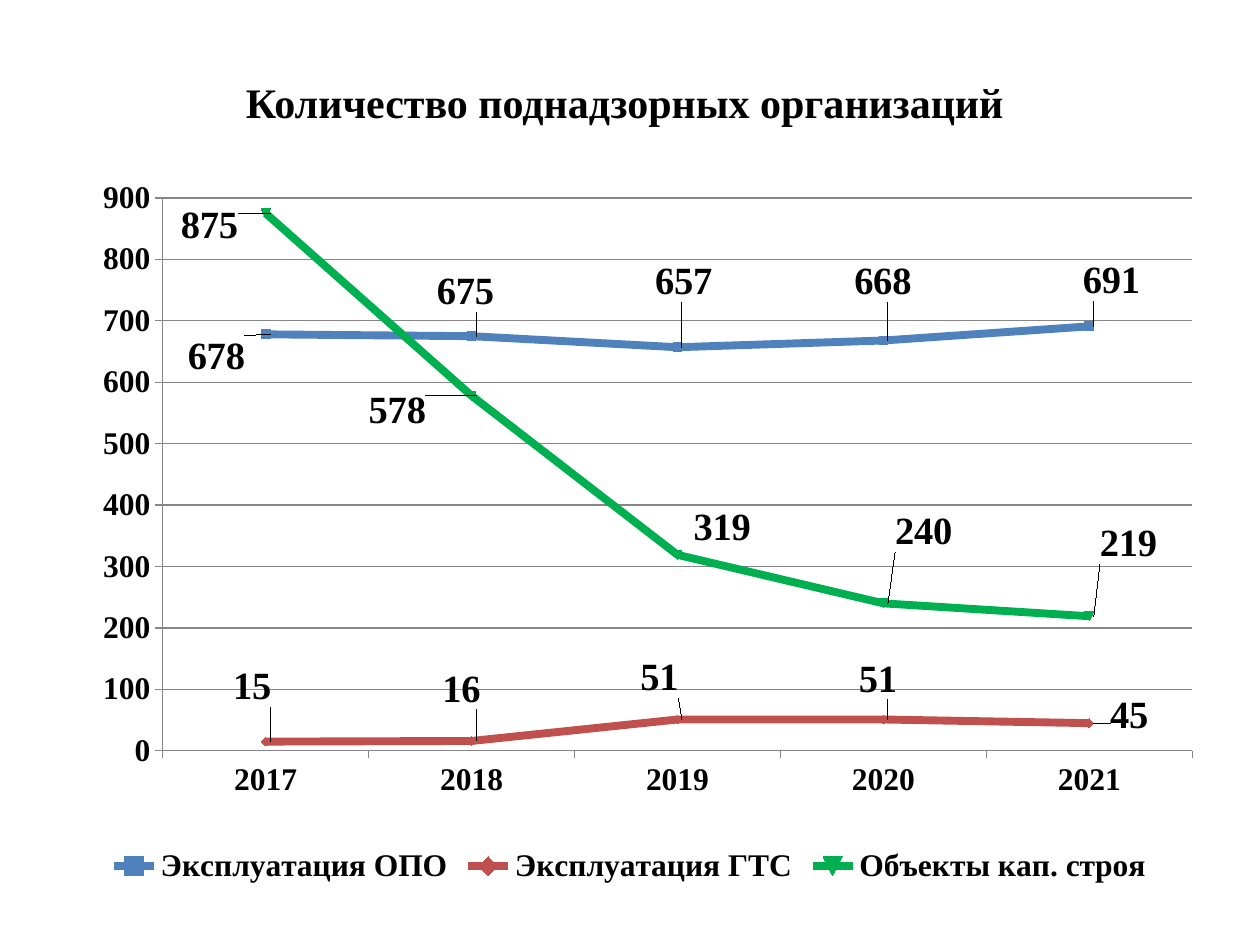
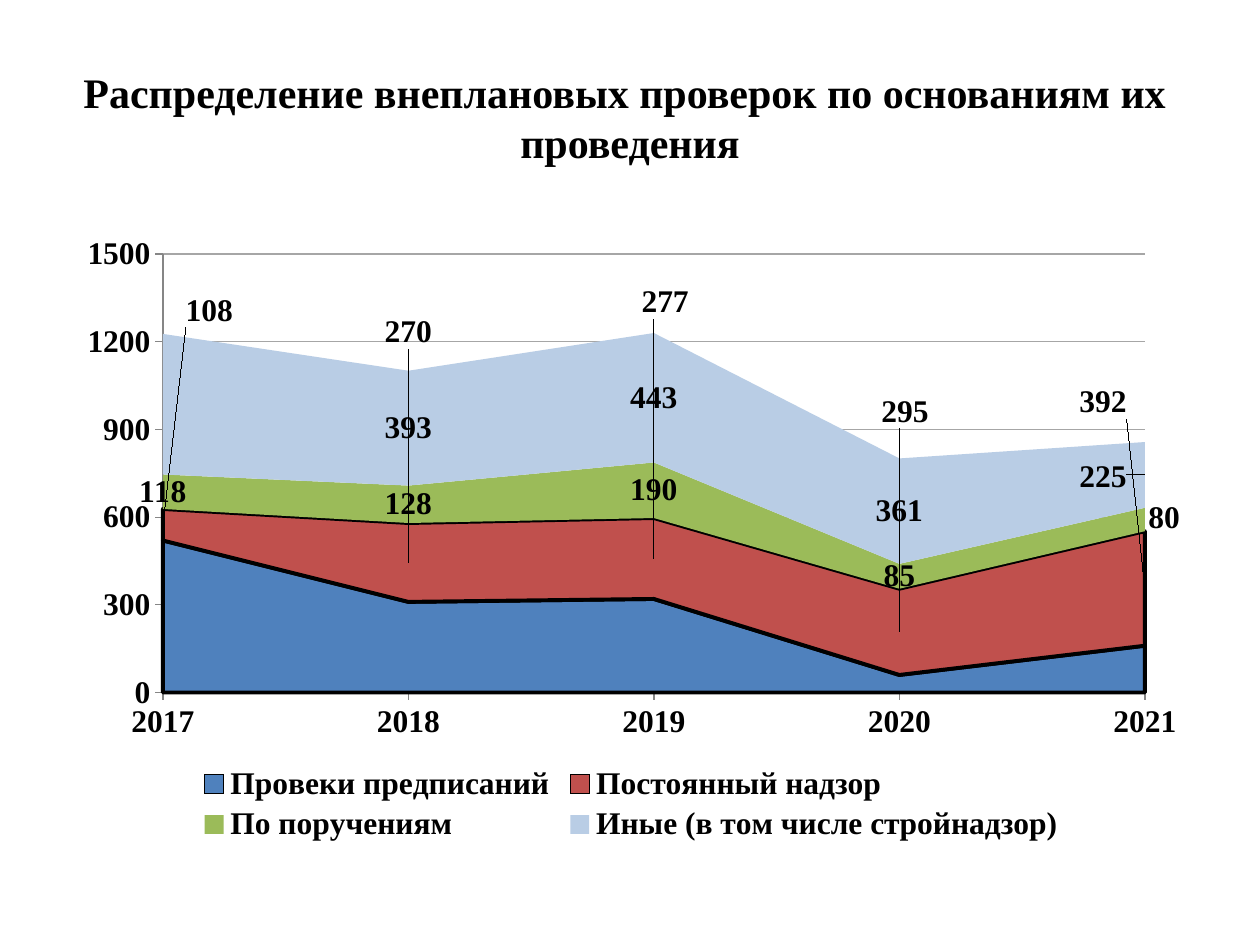
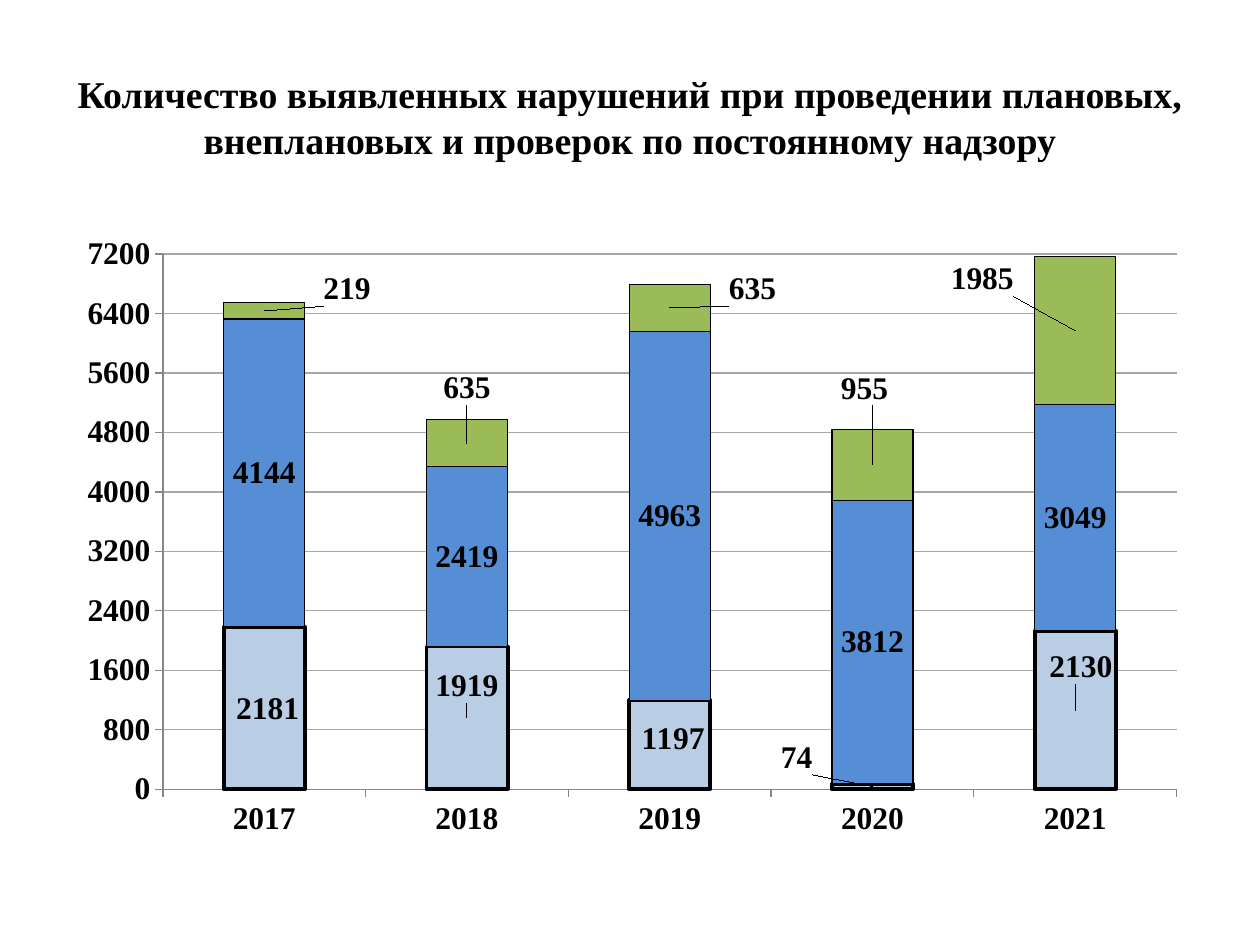
from lxml import etree
from pptx import Presentation
from pptx.chart.data import CategoryChartData
from pptx.dml.color import RGBColor
from pptx.enum.chart import XL_CHART_TYPE, XL_LABEL_POSITION, XL_LEGEND_POSITION, XL_TICK_MARK
from pptx.enum.text import MSO_ANCHOR, PP_ALIGN
from pptx.oxml.ns import qn
from pptx.util import Inches, Pt

LINE = XL_CHART_TYPE.LINE_MARKERS
AREA = XL_CHART_TYPE.AREA_STACKED
COLUMN = XL_CHART_TYPE.COLUMN_STACKED
LABEL_RIGHT = XL_LABEL_POSITION.RIGHT
LEGEND_BOTTOM = XL_LEGEND_POSITION.BOTTOM
TICK_OUT = XL_TICK_MARK.OUTSIDE
TICK_NONE = XL_TICK_MARK.NONE
CENTER = PP_ALIGN.CENTER
MIDDLE = MSO_ANCHOR.MIDDLE

BLACK = RGBColor(0x00, 0x00, 0x00)
AXIS_GRAY = RGBColor(0x86, 0x86, 0x86)
GRID_GRAY = RGBColor(0xA6, 0xA6, 0xA6)
BLUE = RGBColor(0x4F, 0x81, 0xBD)
RED = RGBColor(0xC0, 0x50, 0x4D)
EMERALD = RGBColor(0x00, 0xB0, 0x50)
OLIVE = RGBColor(0x9B, 0xBB, 0x59)
PALE_BLUE = RGBColor(0xB9, 0xCD, 0xE5)
BRIGHT_BLUE = RGBColor(0x55, 0x8E, 0xD5)

FONT = "Times New Roman"
YEARS = ["2017", "2018", "2019", "2020", "2021"]
TITLE_ONLY = 5
HIDDEN = "hidden"


class Deck:
    def __init__(self):
        self.prs = Presentation()
        self.prs.slide_width = Inches(10)
        self.prs.slide_height = Inches(7.5)
        self.s = None

    def style(self, font, size):
        values = {"name": FONT, "size": Pt(size), "bold": True}
        for key, value in values.items():
            setattr(font, key, value)
        font.color.rgb = BLACK

    def place(self, sp, box):
        for key, value in zip(("left", "top", "width", "height"), box):
            setattr(sp, key, Inches(value))

    def slide(self, text, height, size):
        self.s = self.prs.slides.add_slide(self.prs.slide_layouts[TITLE_ONLY])
        sp = self.s.shapes.title
        self.place(sp, (0.5, 0.3, 9, height))
        tf = sp.text_frame
        tf.vertical_anchor = MIDDLE
        p = tf.paragraphs[0]
        p.text = text
        p.alignment = CENTER
        for r in p.runs:
            self.style(r.font, size)

    def chart(self, kind, box, series, top, step, grid, plot_box, label_size=18, legend=True):
        data = CategoryChartData()
        data.categories = YEARS
        for item in series:
            data.add_series(item["name"], item["values"])
        frame = self.s.shapes.add_chart(kind, *map(Inches, box), data)
        chart = frame.chart
        chart.has_title = False
        self.style(chart.font, 18)
        chart.has_legend = legend
        if legend:
            chart.legend.position = LEGEND_BOTTOM
            chart.legend.include_in_layout = False
            self.style(chart.legend.font, 18)
        self.axes(chart, top, step, grid)
        plot = chart.plots[0]
        if kind == COLUMN:
            plot.gap_width, plot.overlap = 150, 100
        if kind != AREA:
            plot.vary_by_categories = False
        for ser, item in zip(plot.series, series):
            self.paint(ser, item, kind)
            if "shifts" in item:
                self.labels(ser, item["shifts"], label_size, kind)
        area = chart.element.find(".//" + qn("c:plotArea"))
        for old in area.findall(qn("c:layout")):
            area.remove(old)
        area.insert(0, self.layout(zip("xywh", plot_box), True))

    def axes(self, chart, top, step, grid):
        values = {"minimum_scale": 0, "maximum_scale": top, "major_unit": step,
                  "has_major_gridlines": True}
        for key, value in values.items():
            setattr(chart.value_axis, key, value)
        gridline = chart.value_axis.major_gridlines.format.line
        gridline.color.rgb, gridline.width = grid, Pt(0.75)
        for axis in (chart.category_axis, chart.value_axis):
            axis.major_tick_mark = TICK_OUT
            axis.minor_tick_mark = TICK_NONE
            axis.format.line.color.rgb = AXIS_GRAY
            self.style(axis.tick_labels.font, 18)

    def paint(self, ser, item, kind):
        if kind == LINE:
            ser.smooth = False
            ser.format.line.color.rgb = item["color"]
            ser.format.line.width = Pt(4.5)
            ser.marker.size = 5
            ser.marker.format.fill.solid()
            ser.marker.format.fill.fore_color.rgb = item["color"]
            ser.marker.format.line.color.rgb = item["color"]
            return
        ser.format.fill.solid()
        ser.format.fill.fore_color.rgb = item["color"]
        if "border" in item:
            ser.format.line.color.rgb = BLACK
            ser.format.line.width = Pt(item["border"])
        else:
            ser.format.line.fill.background()

    def labels(self, ser, shifts, size, kind):
        labels = ser.data_labels
        labels.show_value = True
        self.style(labels.font, size)
        if kind == LINE:
            labels.position = LABEL_RIGHT
        for i, shift in shifts.items():
            label = ser.points[i].data_label
            self.style(label.font, size)
            if kind == LINE:
                label.position = LABEL_RIGHT
            index = ser.points[i].data_label.font and ser.format and i
            node = next(n for n in ser.data_labels._element.findall(qn("c:dLbl"))
                        if n.find(qn("c:idx")).get("val") == str(index))
            if shift == HIDDEN:
                for child in list(node)[1:]:
                    node.remove(child)
                etree.SubElement(node, qn("c:delete")).set("val", "1")
            else:
                node.insert(1, self.layout(zip("xy", shift)))

    def layout(self, percents, inner=False):
        layout = etree.Element(qn("c:layout"))
        manual = etree.SubElement(layout, qn("c:manualLayout"))
        if inner:
            for tag, value in (("layoutTarget", "inner"), ("xMode", "edge"), ("yMode", "edge")):
                etree.SubElement(manual, qn("c:" + tag)).set("val", value)
        for tag, value in percents:
            etree.SubElement(manual, qn("c:" + tag)).set("val", f"{value / 100:.3f}")
        return layout


def points(*shifts):
    return dict(enumerate(shifts))


def main():
    deck = Deck()
    lower_box = (0.51, 1.78, 9, 4.95)

    deck.slide("Количество поднадзорных организаций ", 1.01, 24)
    deck.chart(LINE, (0.5, 1.39, 9, 5.67), [
        {"name": "Эксплуатация ОПО", "values": [678, 675, 657, 668, 691], "color": BLUE,
         "shifts": points((-7.7, 3.1), (-3.9, -6.3), (-2.8, -9.2), (-3.4, -8.3), (-1.4, -6.4))},
        {"name": "Эксплуатация ГТС", "values": [15, 16, 51, 51, 45], "color": RED,
         "shifts": points((-3.7, -7.7), (-3.4, -7.3), (-4.1, -5.9), (-3, -5.7), (1, -1.1))},
        {"name": "Объекты кап. строя", "values": [875, 578, 319, 240, 219], "color": EMERALD,
         "shifts": points((-8.3, 1.7), (-9.9, 2), (0.6, -3.8), (0.2, -10.1), (0.1, -10.2))},
    ], 900, 100, AXIS_GRAY, (8.8, 3.2, 90.8, 77.4), label_size=22)

    deck.slide("Распределение внеплановых проверок по основаниям их \vпроведения", 1.25, 24)
    deck.chart(AREA, lower_box, [
        {"name": "Провеки предписаний", "values": [520, 310, 320, 60, 160], "color": BLUE,
         "border": 2.25},
        {"name": "Постоянный надзор", "values": [108, 270, 277, 295, 392], "color": RED,
         "border": 2.25,
         "shifts": points((4.1, -34.3), (0, -36.9), (1, -41.1), (0.5, -35.3), (-3.7, -29.9))},
        {"name": "По поручениям", "values": [118, 128, 190, 85, 80], "color": OLIVE,
         "shifts": {4: (1.7, -0.3)}},
        {"name": "Иные (в том числе стройнадзор)", "values": [481, 393, 443, 361, 225],
         "color": PALE_BLUE, "shifts": {0: HIDDEN, 4: (-3.7, 0.3)}},
    ], 1500, 300, GRID_GRAY, (8.7, 4.8, 86.6, 70.3))

    deck.slide("Количество выявленных нарушений при проведении плановых, "
               "внеплановых и проверок по постоянному надзору", 1.25, 21.6)
    deck.chart(COLUMN, lower_box, [
        {"name": "Series 1", "values": [2181, 1919, 1197, 74, 2130], "color": PALE_BLUE,
         "border": 2.25,
         "shifts": points((0.3, 0.2), (0, -5.1), (0.3, -1), (-6.7, -4.6), (0.5, -6.9))},
        {"name": "Series 2", "values": [4144, 2419, 4963, 3812, 3049], "color": BRIGHT_BLUE,
         "border": 0.75, "shifts": {}},
        {"name": "Series 3", "values": [219, 635, 635, 955, 1985], "color": OLIVE,
         "border": 0.75,
         "shifts": points((7.3, -3.5), (0, -8.8), (7.3, -3), (-0.7, -12.2), (-8.2, -8.2))},
    ], 7200, 800, GRID_GRAY, (8.7, 4.8, 89.4, 85.8), legend=False)

    deck.prs.save("out.pptx")


if __name__ == "__main__":
    main()
